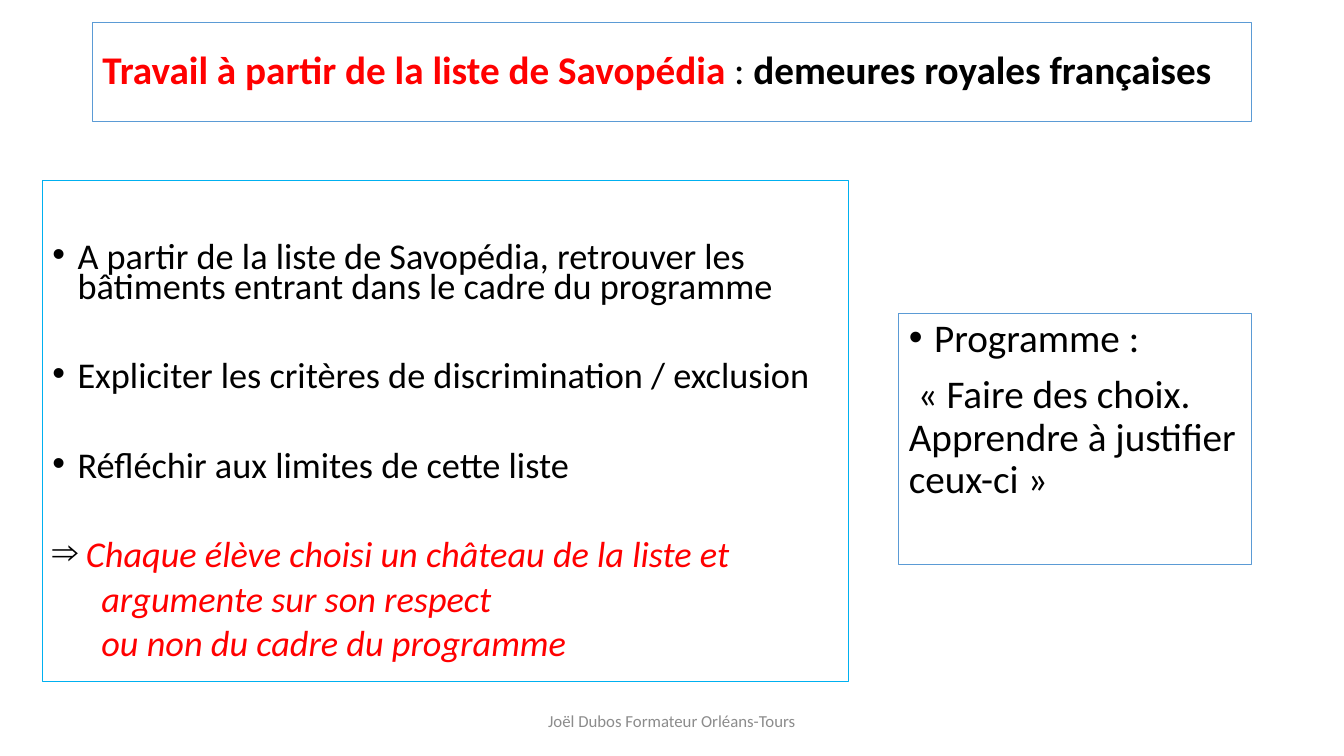
import pptx
import pptx.dml.color
import pptx.enum.text
import pptx.oxml.ns
import pptx.util
from lxml import etree

Pt = pptx.util.Pt
ALIGN = pptx.enum.text.PP_ALIGN
ANCHOR = pptx.enum.text.MSO_ANCHOR
BLACK, RED, GREY = "000000", "FF0000", "8C8C8C"
BLUE, CYAN = "5B9BD5", "00B0F0"


def colour(value):
    return pptx.dml.color.RGBColor.from_string(value)


class SlideBuilder:
    """Holds the text style and the current slide."""

    font_name = "Calibri"

    def __init__(self, page):
        self.page = page

    def place(self, box, left, top, width, height, anchor, top_inset=3.6):
        box.left, box.top = Pt(left), Pt(top)
        box.width, box.height = Pt(width), Pt(height)
        frame = box.text_frame
        frame.word_wrap = True
        frame.auto_size = pptx.enum.text.MSO_AUTO_SIZE.NONE
        frame.vertical_anchor = anchor
        frame.margin_left = frame.margin_right = Pt(7.2)
        frame.margin_top, frame.margin_bottom = Pt(top_inset), Pt(3.6)
        return frame

    def framed(self, index, line, left, top, width, height,
               anchor=ANCHOR.TOP, top_inset=3.6):
        box = self.page.placeholders[index]
        box.line.color.rgb = colour(line)
        box.line.width = Pt(0.75)
        return self.place(box, left, top, width, height, anchor, top_inset)

    def text_box(self, left, top, width, height):
        box = self.page.shapes.add_textbox(0, 0, 0, 0)
        return self.place(box, left, top, width, height, ANCHOR.MIDDLE)

    def paragraph(self, frame, text, size, ink=BLACK, spacing=0.9, before=0,
                  bullet=None, margin=0, indent=0, italic=False,
                  align=ALIGN.LEFT):
        para = frame.paragraphs[0]
        if para.runs:
            para = frame.add_paragraph()
        self.bullet(para, bullet, margin, indent)
        para.alignment = align
        para.line_spacing = spacing
        para.space_before, para.space_after = Pt(before), Pt(0)
        para.font.name, para.font.size = self.font_name, Pt(size)
        para.font.color.rgb = colour(ink)
        para.font.italic = italic
        if text:
            para.add_run().text = text
        return para

    def bullet(self, para, mark, margin, indent):
        properties = para._p.get_or_add_pPr()
        properties.set("marL", str(Pt(margin)))
        properties.set("indent", str(Pt(indent)))

        def add(parent, tag, **attributes):
            return etree.SubElement(parent, pptx.oxml.ns.qn(tag), attributes)

        if mark:
            add(add(properties, "a:buClr"), "a:srgbClr", val=BLACK)
            add(properties, "a:buFont", typeface="Arial")
            add(properties, "a:buChar", char=mark)
        else:
            add(properties, "a:buNone")

    def span(self, para, text, ink, bold):
        run = para.add_run()
        run.text = text
        run.font.bold = bold
        run.font.color.rgb = colour(ink)


def main():
    deck = pptx.Presentation()
    deck.slide_width, deck.slide_height = Pt(960), Pt(540)
    builder = SlideBuilder(deck.slides.add_slide(deck.slide_layouts[3]))

    # Title
    title = builder.framed(0, BLUE, 66, 15.8, 828, 71.3, ANCHOR.MIDDLE)
    heading = builder.paragraph(title, "", 28)
    builder.span(heading, "Travail à partir de la liste de Savopédia ", RED, True)
    builder.span(heading, ": ", BLACK, False)
    builder.span(heading, "demeures royales françaises", BLACK, True)

    # Tasks
    tasks = builder.framed(1, CYAN, 30.2, 128.9, 576, 357.8, top_inset=46)
    for number, task in enumerate((
            "A partir de la liste de Savopédia, retrouver les bâtiments "
            "entrant dans le cadre du programme",
            "Expliciter les critères de discrimination / exclusion",
            "Réfléchir aux limites de cette liste")):
        builder.paragraph(tasks, task, 25.9, spacing=0.7, bullet="•",
                          before=42 if number else 0, margin=18, indent=-18)

    # Conclusion of the tasks
    builder.paragraph(tasks, "Chaque élève choisi un château de la liste et",
                      25.9, RED, 0.7, 42, "⇒", 24, -24, italic=True)
    for ending in ("argumente sur son respect", "ou non du cadre du programme"):
        builder.paragraph(tasks, ending, 25.9, RED, 0.7, 10, margin=35,
                          italic=True)

    # Curriculum quotation
    quotation = builder.framed(2, BLUE, 642, 223.9, 252, 179.3)
    builder.paragraph(quotation, "Programme :", 28, bullet="•",
                      margin=18, indent=-18)
    builder.paragraph(quotation,
                      "« Faire des choix. Apprendre à justifier ceux-ci »",
                      28, before=10, indent=6.3)

    # Footer
    footer = builder.text_box(318, 500.5, 324, 28.8)
    builder.paragraph(footer, "Joël Dubos Formateur Orléans-Tours", 12, GREY,
                      spacing=1.0, align=ALIGN.CENTER)

    deck.save("out.pptx")


if __name__ == "__main__":
    main()
